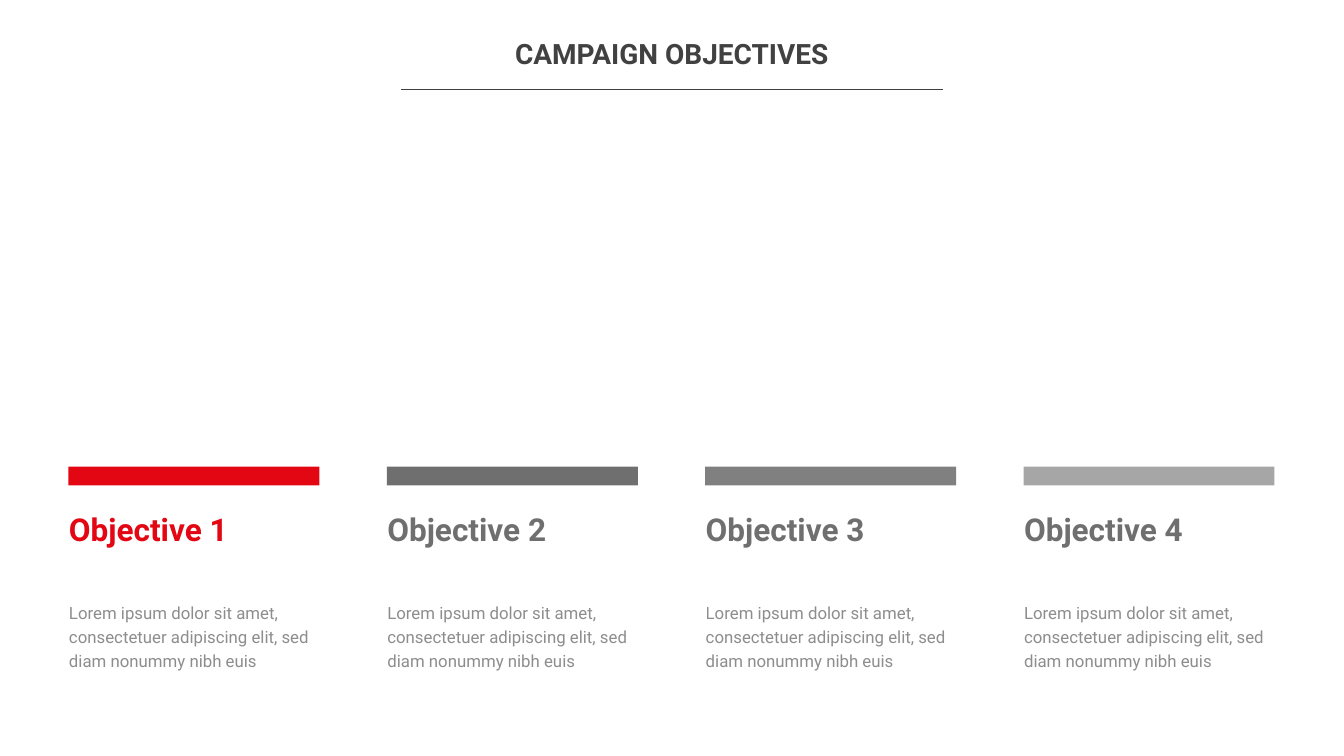
import pptx
import pptx.dml.color
import pptx.enum.dml
import pptx.enum.shapes
import pptx.enum.text
import pptx.oxml
import pptx.oxml.ns
import pptx.util
from dataclasses import dataclass
from lxml import etree

Pt = pptx.util.Pt
ALIGN = pptx.enum.text.PP_ALIGN


@dataclass(frozen=True)
class Theme:
    font: str = "Roboto"
    ink: str = "414141"
    accent: str = "E30613"
    grey: str = "706F6F"
    bars: tuple = ("E30613", "706F6F", "808080", "A6A6A6")
    title_size: int = 40
    heading_size: int = 45
    body_size: int = 24
    body_alpha: int = 60
    inset: int = 5


class Deck:
    """Holds the theme and the slide being built; lengths are in points."""

    def __init__(self, slide, theme):
        self.slide = slide
        self.theme = theme

    def format_text(self, sp, text, size, color, bold=False,
                    align=ALIGN.LEFT, spacing=1.0, alpha=None):
        tf = sp.text_frame
        tf.word_wrap = True
        tf.auto_size = pptx.enum.text.MSO_AUTO_SIZE.SHAPE_TO_FIT_TEXT
        tf.vertical_anchor = pptx.enum.text.MSO_ANCHOR.TOP
        tf.margin_left = tf.margin_right = Pt(self.theme.inset)
        tf.margin_top = tf.margin_bottom = Pt(self.theme.inset)
        tf.text = text
        p = tf.paragraphs[0]
        p.alignment = align
        p.line_spacing = spacing
        p.space_before = Pt(0)
        r = p.runs[0]
        r.font.name = self.theme.font
        r.font.size = Pt(size)
        r.font.bold = bold
        r.font.color.rgb = pptx.dml.color.RGBColor.from_string(color)
        if alpha is not None:
            qn = pptx.oxml.ns.qn
            clr = r.font.fill._xPr.find(qn("a:solidFill")).find(qn("a:srgbClr"))
            etree.SubElement(clr, qn("a:alpha")).set("val", str(alpha * 1000))

    def title(self, text, x, y, w, h):
        sp = self.slide.shapes.title
        sp.left, sp.top, sp.width, sp.height = Pt(x), Pt(y), Pt(w), Pt(h)
        self.format_text(sp, text, self.theme.title_size, self.theme.ink,
                         bold=True, align=ALIGN.CENTER, spacing=1.2)

    def text(self, text, x, y, w, h, size, color, **style):
        sp = self.slide.shapes.add_textbox(Pt(x), Pt(y), Pt(w), Pt(h))
        self.format_text(sp, text, size, color, **style)

    def bar(self, x, y, w, h, color):
        sp = self.slide.shapes.add_shape(
            pptx.enum.shapes.MSO_SHAPE.RECTANGLE, Pt(x), Pt(y), Pt(w), Pt(h))
        sp.shadow.inherit = False
        sp.fill.solid()
        sp.fill.fore_color.rgb = pptx.dml.color.RGBColor.from_string(color)
        sp.line.fill.background()

    def rule(self, x1, x2, y, color, width):
        line = self.slide.shapes.add_connector(
            pptx.enum.shapes.MSO_CONNECTOR.STRAIGHT, Pt(x1), Pt(y), Pt(x2), Pt(y))
        line.line.color.rgb = pptx.dml.color.RGBColor.from_string(color)
        line.line.width = Pt(width)
        etree.SubElement(line._element.spPr, pptx.oxml.ns.qn("a:effectLst"))


def main():
    prs = pptx.Presentation()
    prs.slide_width, prs.slide_height = Pt(1920), Pt(1080)
    theme = Theme()
    deck = Deck(prs.slides.add_slide(prs.slide_layouts[5]), theme)

    deck.title("CAMPAIGN OBJECTIVES", 320.5, 37.5, 1278, 59)
    deck.rule(573, 1347, 127.5, theme.ink, 0.5)

    body = ("Lorem ipsum dolor sit amet, consectetuer adipiscing elit, "
            "sed diam nonummy nibh euis")
    left, pitch, width = 93.6, 454.8, 385
    for i, bar_color in enumerate(theme.bars):
        x = left + i * pitch
        heading_color = theme.accent if i == 0 else theme.grey
        deck.bar(x + 4.2, 666.7, 358.5, 26.6, bar_color)
        deck.text(f"Objective {i + 1}", x, 723.6, width, 62,
                  theme.heading_size, heading_color, bold=True)
        deck.text(body, x, 849.6, width, 112, theme.body_size, theme.ink,
                  spacing=1.2, alpha=theme.body_alpha)

    prs.save("out.pptx")


if __name__ == "__main__":
    main()
